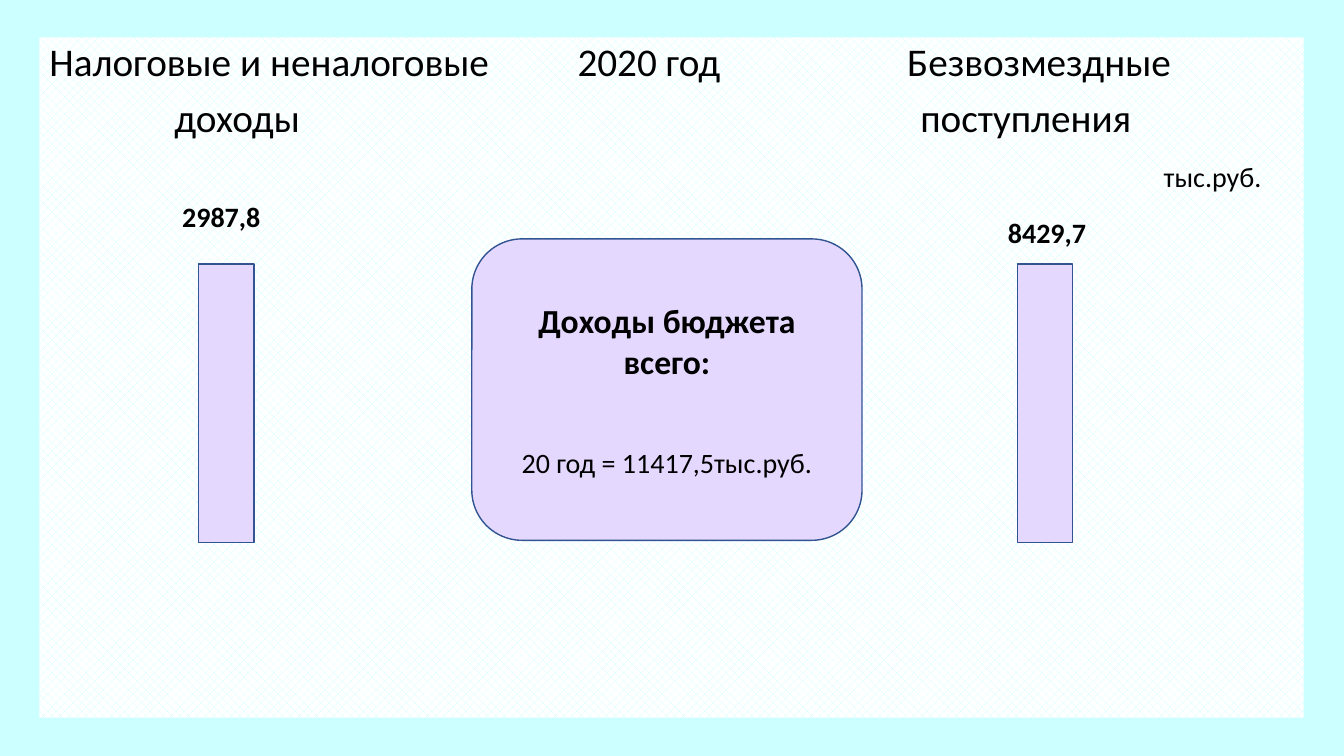
import pptx
import pptx.util
import pptx.dml.color
import pptx.enum.dml
import pptx.enum.shapes
import pptx.enum.text
import lxml.etree

Inches = pptx.util.Inches
Pt = pptx.util.Pt
RGBColor = pptx.dml.color.RGBColor
ALIGN = pptx.enum.text.PP_ALIGN
ANCHOR = pptx.enum.text.MSO_ANCHOR
SHAPE = pptx.enum.shapes.MSO_SHAPE

AQUA = RGBColor(0xCC, 0xFF, 0xFF)
WHITE = RGBColor(0xFF, 0xFF, 0xFF)
BLACK = RGBColor(0, 0, 0)
LILAC = RGBColor(0xE5, 0xD8, 0xFE)
BLUE = RGBColor(0x32, 0x54, 0x91)


def write(paragraph, text, size, bold=False, **paragraph_format):
    run = paragraph.add_run()
    run.text = text
    font_format = {"name": "Calibri", "size": Pt(size), "bold": bold}
    for name, value in font_format.items():
        setattr(run.font, name, value)
    run.font.color.rgb = BLACK
    for name, value in paragraph_format.items():
        setattr(paragraph, name, value)


def add_lilac_shape(kind, left, top, width, height):
    shape = slide.shapes.add_shape(
        kind, Inches(left), Inches(top), Inches(width), Inches(height))
    shape.shadow.inherit = False
    shape.fill.solid()
    shape.fill.fore_color.rgb = LILAC
    shape.line.color.rgb = BLUE
    shape.line.width = Pt(1)
    return shape


presentation = pptx.Presentation()
presentation.slide_width = Inches(13.33)
presentation.slide_height = Inches(7.5)
slide = presentation.slides.add_slide(presentation.slide_layouts[1])
slide.background.fill.solid()
slide.background.fill.fore_color.rgb = AQUA

title = slide.shapes.title
title.element.getparent().remove(title.element)

panel = slide.placeholders[1]
panel_format = {"left": 0.39, "top": 0.37, "width": 12.54, "height": 6.75}
for name, value in panel_format.items():
    setattr(panel, name, Inches(value))
panel.fill.patterned()
panel.fill.pattern = pptx.enum.dml.MSO_PATTERN.WEAVE
panel.fill.fore_color.rgb = AQUA
panel.fill.back_color.rgb = WHITE

year_box = slide.shapes.add_textbox(
    Inches(5.63), panel.top, Inches(2), Inches(0.6))
grants_box = slide.shapes.add_textbox(
    Inches(8.9), panel.top, Inches(3.5), Inches(1.15))

headings = [
    (panel, [("Налоговые и неналоговые", 0), ("доходы", 1.24)]),
    (year_box, [("2020 год", 0)]),
    (grants_box, [("Безвозмездные", 0), ("поступления", 0.13)]),
]
for shape, lines in headings:
    frame = shape.text_frame
    frame.word_wrap = True
    frame.auto_size = pptx.enum.text.MSO_AUTO_SIZE.NONE
    frame.vertical_anchor = ANCHOR.TOP
    frame.text = "\n" * (len(lines) - 1)
    for paragraph, (text, indent) in zip(frame.paragraphs, lines):
        write(paragraph, text, 28, alignment=ALIGN.LEFT,
              line_spacing=0.9, space_before=Pt(10))
        properties = paragraph.runs[0]._r.getparent().get_or_add_pPr()
        properties.set("marL", str(Inches(indent)))
        properties.set("indent", "0")
        lxml.etree.SubElement(
            properties, "{" + properties.nsmap["a"] + "}buNone")

for bar_left in (1.97, 10.09):
    add_lilac_shape(SHAPE.RECTANGLE, bar_left, 2.62, 0.55, 2.76)

labels = [
    ("2987,8", 1.44, 1.93, 1.51, True, ALIGN.CENTER),
    ("8429,7", 9.41, 2.08, 1.95, True, ALIGN.CENTER),
    ("тыс.руб.", 10.91, 1.53, 1.7, False, ALIGN.RIGHT),
]
for text, left, top, width, bold, alignment in labels:
    label = slide.shapes.add_textbox(
        Inches(left), Inches(top), Inches(width), Inches(0.44))
    label.text_frame.word_wrap = True
    label.text_frame.vertical_anchor = ANCHOR.MIDDLE
    write(label.text_frame.paragraphs[0], text, 20, bold, alignment=alignment)

total = add_lilac_shape(SHAPE.ROUNDED_RECTANGLE, 4.68, 2.37, 3.87, 2.99)
total.text_frame.word_wrap = True
total.text_frame.vertical_anchor = ANCHOR.MIDDLE
write(total.text_frame.paragraphs[0], "Доходы бюджета всего:", 24, True,
      alignment=ALIGN.CENTER)
write(total.text_frame.add_paragraph(), "20 год = 11417,5тыс.руб.", 20,
      alignment=ALIGN.CENTER, space_before=Pt(46))

presentation.save("out.pptx")
